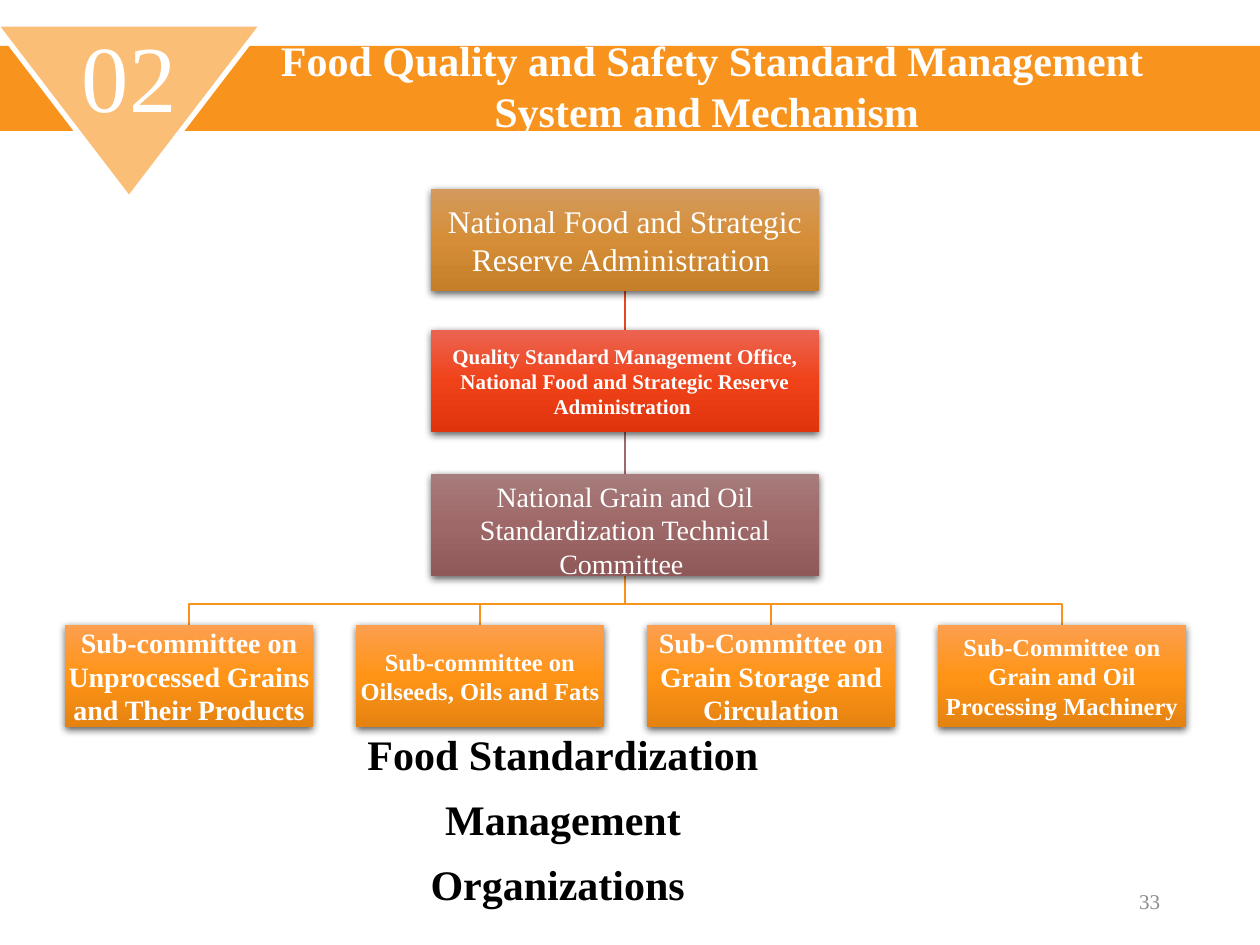
"""Build the slide on food standard management bodies."""
from pptx import Presentation
from pptx.dml.color import RGBColor
from pptx.enum.shapes import MSO_CONNECTOR, MSO_SHAPE
from pptx.enum.text import MSO_ANCHOR, PP_ALIGN
from pptx.oxml import parse_xml
from pptx.oxml.ns import nsdecls
from pptx.util import Emu, Pt

SCALE = 914400 / 126
WHITE = RGBColor(0xFF, 0xFF, 0xFF)
BLACK = RGBColor(0x00, 0x00, 0x00)
GRAY = RGBColor(0x8C, 0x8C, 0x8C)
ORANGE = RGBColor(0xF8, 0x93, 0x1D)
PEACH = RGBColor(0xFB, 0xBE, 0x77)
RED = RGBColor(0xE6, 0x48, 0x23)
MAUVE = RGBColor(0x9C, 0x6A, 0x6A)
GOLDS = [RGBColor(0xD4, 0x9A, 0x5D), RGBColor(0xD5, 0x8E, 0x37), RGBColor(0xC5, 0x7F, 0x29)]
REDS = [RGBColor(0xEB, 0x64, 0x51), RGBColor(0xF0, 0x42, 0x19), RGBColor(0xE0, 0x34, 0x0C)]
MAUVES = [RGBColor(0xA7, 0x7C, 0x7C), RGBColor(0x9F, 0x68, 0x68), RGBColor(0x90, 0x59, 0x59)]
AMBERS = [RGBColor(0xFC, 0x9F, 0x4F), RGBColor(0xFF, 0x94, 0x16), RGBColor(0xE5, 0x83, 0x11)]


def px(*nums):
    return [Emu(round(num * SCALE)) for num in nums]


def write(shape, text, size, color, bold=False, pads=(1, 1, 1, 1),
          anchor=MSO_ANCHOR.MIDDLE, align=PP_ALIGN.CENTER):
    frame = shape.text_frame
    frame.word_wrap = True
    frame.vertical_anchor = anchor
    (frame.margin_left, frame.margin_top,
     frame.margin_right, frame.margin_bottom) = px(*pads)
    para = frame.paragraphs[0]
    para.alignment = align
    run = para.add_run()
    run.text = text
    run.font.name = "Times New Roman"
    run.font.size = Pt(size)
    run.font.bold = bold
    run.font.color.rgb = color
    return para


deck = Presentation()
deck.slide_width, deck.slide_height = px(1260, 945)
slide = deck.slides.add_slide(deck.slide_layouts[6])
shapes = slide.shapes

TALL, WIDE, SLIM = 102, 388, 248
MID, LEFT, STEP = 625, 65, 291
TOPS = [189, 330, 474]
BASE, BEND = 625, 604

for col in reversed(range(4)):
    end = LEFT + STEP * col + SLIM // 2
    build = shapes.build_freeform(MID, TOPS[2] + TALL, scale=SCALE)
    build.add_line_segments([(MID, BEND), (end, BEND), (end, BASE)], close=False)
    branch = build.convert_to_shape()
    branch.shadow.inherit = False
    branch.fill.background()
    branch.line.color.rgb = ORANGE
    branch.line.width = Pt(1)

for top, end, color in zip(TOPS, TOPS[1:], [RED, MAUVE]):
    link = shapes.add_connector(MSO_CONNECTOR.STRAIGHT, *px(MID, top + TALL, MID, end))
    link.line.color.rgb = color
    link.line.width = Pt(1)
    link._element.spPr.append(parse_xml(f"<a:effectLst {nsdecls('a')}/>"))

heads = [
    ("National Food and Strategic Reserve Administration ", 18, False, GOLDS, 1),
    ("Quality Standard Management Office, National Food and Strategic Reserve Administration ",
     12, True, REDS, 1),
    ("National Grain and Oil Standardization Technical Committee ", 16, False, MAUVES, 10),
]
subs = [
    ("Sub-committee on Unprocessed Grains and Their Products", 16),
    ("Sub-committee on Oilseeds, Oils and Fats", 14),
    ("Sub-Committee on Grain Storage and Circulation", 16),
    ("Sub-Committee on Grain and Oil Processing Machinery", 14),
]
boxes = [(MID - WIDE // 2, top, WIDE, *head) for top, head in zip(TOPS, heads)]
boxes += [(LEFT + STEP * col, BASE, SLIM, text, size, True, AMBERS, 1)
          for col, (text, size) in enumerate(subs)]

for left, top, wide, text, size, bold, tones, pad in boxes:
    box = shapes.add_shape(MSO_SHAPE.RECTANGLE, *px(left, top, wide, TALL))
    box.line.fill.background()
    stops = "".join(f'<a:gs pos="{pos}"><a:srgbClr val="{tone}"/></a:gs>'
                    for pos, tone in zip((0, 50000, 100000), tones))
    props = box._element.spPr
    props.insert(2, parse_xml(
        f'<a:gradFill {nsdecls("a")} rotWithShape="1"><a:gsLst>{stops}</a:gsLst>'
        '<a:lin ang="5400000" scaled="0"/></a:gradFill>'))
    props.append(parse_xml(
        f'<a:effectLst {nsdecls("a")}><a:outerShdw blurRad="57150" dist="19050" '
        'dir="5400000" algn="ctr" rotWithShape="0"><a:srgbClr val="000000">'
        '<a:alpha val="63000"/></a:srgbClr></a:outerShdw></a:effectLst>'))
    write(box, text, size, WHITE, bold, (1, pad, 1, 1))

label = shapes.add_textbox(*px(323, 713, 480, 200))
para = write(label, "Food Standardization Management Organizations ", 24, BLACK, True,
             (0, 0, 0, 0), MSO_ANCHOR.TOP)
para.line_spacing = 1.3

band = shapes.add_shape(MSO_SHAPE.RECTANGLE, *px(-4, 46, 1264, 85))
band.shadow.inherit = False
band.fill.solid()
band.fill.fore_color.rgb = ORANGE
band.line.fill.background()

page = shapes.add_textbox(*px(890, 876, 283, 50))
write(page, "33", 12, GRAY, pads=(13, 6, 13, 6), align=PP_ALIGN.RIGHT)

build = shapes.build_freeform(-5, 24, scale=SCALE)
build.add_line_segments([(263, 24), (129, 199)], close=True)
badge = build.convert_to_shape()
badge.shadow.inherit = False
badge.fill.solid()
badge.fill.fore_color.rgb = PEACH
badge.line.color.rgb = WHITE
badge.line.width = Pt(3)
write(badge, "02", 54, WHITE, pads=(13, 0, 13, 74))

title = shapes.add_textbox(*px(223, 29, 978, 98))
write(title, "Food Quality and Safety Standard Management System and Mechanism ",
      24, WHITE, True, (13, 6, 13, 6), MSO_ANCHOR.TOP)

deck.save("out.pptx")
